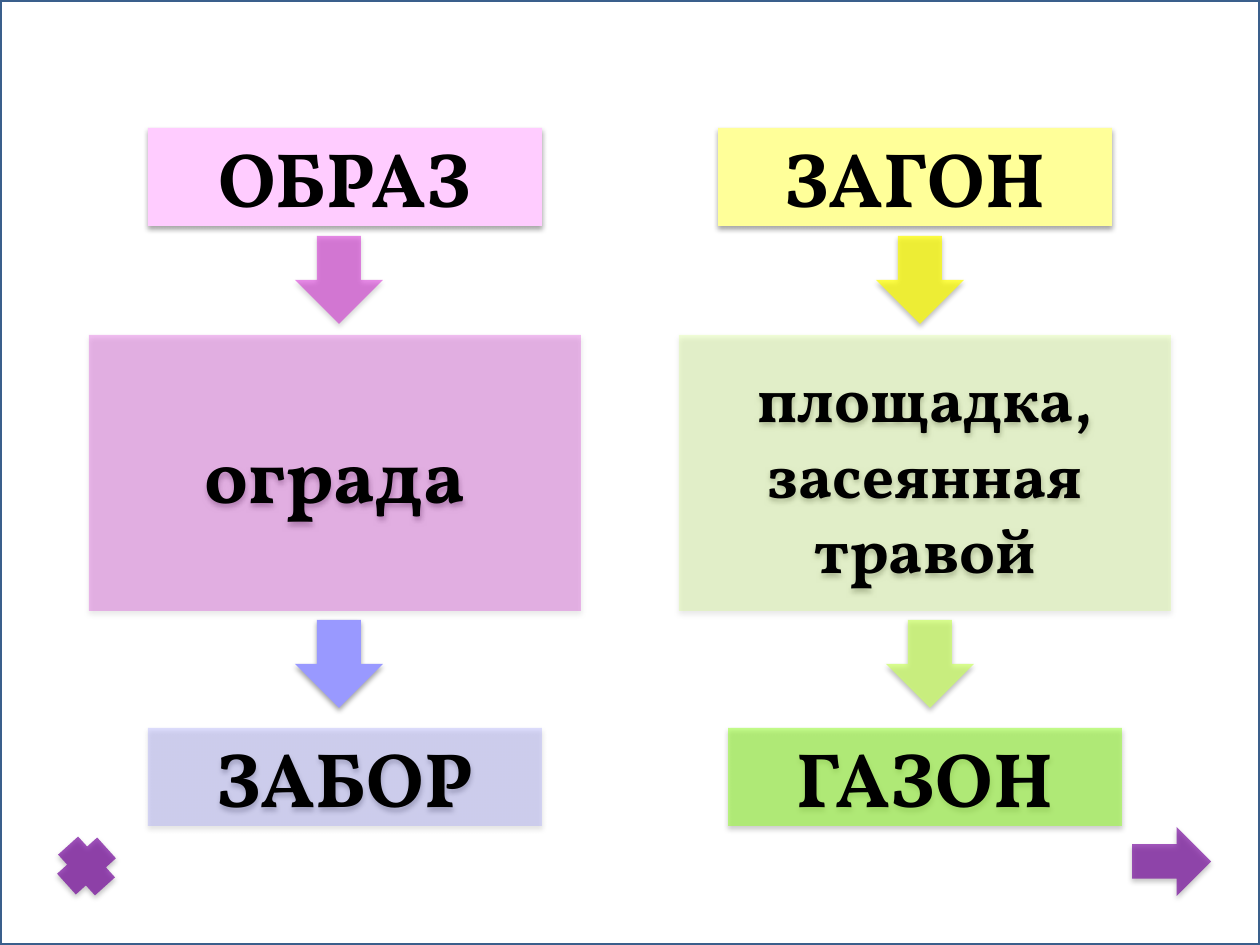
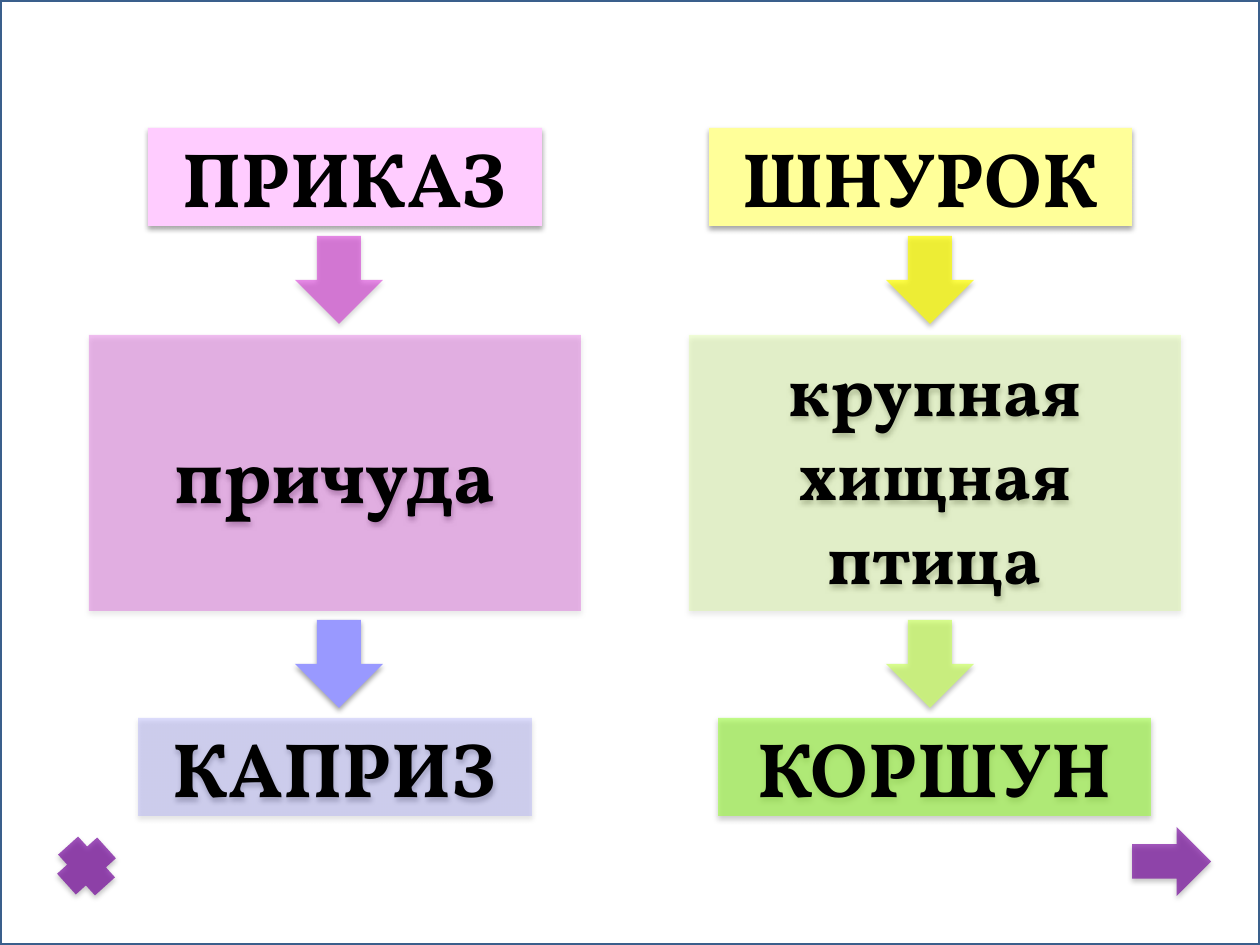
from lxml import etree
from pptx import Presentation
from pptx.dml.color import RGBColor
from pptx.enum.shapes import MSO_SHAPE
from pptx.enum.text import MSO_ANCHOR, PP_ALIGN
from pptx.oxml.ns import qn
from pptx.util import Pt

RECT, DOWN, RIGHT, CROSS = (MSO_SHAPE.RECTANGLE, MSO_SHAPE.DOWN_ARROW,
                            MSO_SHAPE.RIGHT_ARROW, MSO_SHAPE.CROSS)
CENTER, MIDDLE = PP_ALIGN.CENTER, MSO_ANCHOR.MIDDLE

WHITE = RGBColor(0xFF, 0xFF, 0xFF)
BLACK = RGBColor(0x00, 0x00, 0x00)
FRAME_BLUE = RGBColor(0x3A, 0x5F, 0x8C)
PINK = RGBColor(0xFF, 0xCC, 0xFF)
MAGENTA = RGBColor(0xCC, 0x00, 0xCC)
LAVENDER = RGBColor(0x99, 0x99, 0xFF)
PALE_YELLOW = RGBColor(0xFF, 0xFF, 0x99)
YELLOW = RGBColor(0xFF, 0xFF, 0x00)
LIME = RGBColor(0xCC, 0xFF, 0x66)
GREEN = RGBColor(0x99, 0xFF, 0x33)
PURPLE = RGBColor(0x72, 0x00, 0x9A)

FONT = "Vollkorn"
PX = 914400 / 126
WIDTH, HEIGHT = 1260, 945
BAR_HEIGHT, ARROW_SIZE = 98, 88
MEANING_WIDTH, MEANING_HEIGHT = 492, 276
WORD_TOP, ARROW_1_TOP, MEANING_TOP, ARROW_2_TOP = 128, 236, 335, 620
WORD_SIZE = 44

# Fill and opacity of word, arrow, meaning, arrow, answer in each column
COLUMN_FILLS = [
    [(PINK, 100), (MAGENTA, 45), (MAGENTA, 25), (LAVENDER, 100), (LAVENDER, 31)],
    [(PALE_YELLOW, 100), (YELLOW, 72), (LIME, 25), (LIME, 72), (GREEN, 56)],
]

# Answer top, then per column: (word, left, width), arrow left,
# (meaning, left, text size), arrow left, (answer, left, width)
SLIDES = [
    (728, [
        (("ОБРАЗ", 148, 394), 295, ("ограда", 89, 44), 295, ("ЗАБОР", 148, 394)),
        (("ЗАГОН", 718, 394), 876, ("площадка, засеянная травой", 679, 36), 886,
         ("ГАЗОН", 728, 394)),
    ]),
    (718, [
        (("ПРИКАЗ", 148, 394), 295, ("причуда", 89, 44), 295, ("КАПРИЗ", 138, 394)),
        (("ШНУРОК", 709, 423), 886, ("крупная хищная птица", 689, 40), 886,
         ("КОРШУН", 718, 433)),
    ]),
]


def add_block(slide, kind, box, fill, shadow=True):
    """Add a borderless shape; box is in px, fill is (colour, opacity in %)."""
    block = slide.shapes.add_shape(kind, *(round(n * PX) for n in box))
    colour, opacity = fill
    block.fill.solid()
    block.fill.fore_color.rgb = colour
    block.line.fill.background()
    block.shadow.inherit = False
    properties = block.fill._xPr
    if opacity < 100:
        tint = properties.find(qn("a:solidFill"))[0]
        etree.SubElement(tint, qn("a:alpha"), val=str(opacity * 1000))
    if shadow:
        outer = etree.SubElement(properties.find(qn("a:effectLst")), qn("a:outerShdw"),
                                 blurRad=str(Pt(3.1)), dist=str(Pt(1.8)),
                                 dir="5400000", rotWithShape="0")
        black = etree.SubElement(outer, qn("a:srgbClr"), val="000000")
        etree.SubElement(black, qn("a:alpha"), val="35000")
    return block


def add_label(slide, text, size, box, fill):
    frame = add_block(slide, RECT, box, fill).text_frame
    frame.word_wrap = True
    frame.vertical_anchor = MIDDLE
    frame.text = text
    paragraph = frame.paragraphs[0]
    paragraph.alignment = CENTER
    font = paragraph.runs[0].font
    font.name, font.size, font.bold = FONT, Pt(size), True
    font.color.rgb = BLACK


prs = Presentation()
prs.slide_width, prs.slide_height = round(WIDTH * PX), round(HEIGHT * PX)

for answer_top, columns in SLIDES:
    slide = prs.slides.add_slide(prs.slide_layouts[6])
    border = add_block(slide, RECT, (0, 0, WIDTH, HEIGHT), (WHITE, 28), shadow=False)
    border.line.color.rgb = FRAME_BLUE
    border.line.width = Pt(2)

    for column, fills in zip(columns, COLUMN_FILLS):
        word, arrow_1_left, meaning, arrow_2_left, answer = column
        word_fill, arrow_1_fill, meaning_fill, arrow_2_fill, answer_fill = fills

        for (text, left, width), top, fill in ((word, WORD_TOP, word_fill),
                                               (answer, answer_top, answer_fill)):
            add_label(slide, text, WORD_SIZE, (left, top, width, BAR_HEIGHT), fill)

        text, left, size = meaning
        add_label(slide, text, size,
                  (left, MEANING_TOP, MEANING_WIDTH, MEANING_HEIGHT), meaning_fill)

        for left, top, fill in ((arrow_1_left, ARROW_1_TOP, arrow_1_fill),
                                (arrow_2_left, ARROW_2_TOP, arrow_2_fill)):
            add_block(slide, DOWN, (left, top, ARROW_SIZE, ARROW_SIZE), fill)

    add_block(slide, RIGHT, (1132, 827, 79, 69), (PURPLE, 65))
    close_mark = add_block(slide, CROSS, (59, 839, 55, 54), (PURPLE, 67))
    close_mark.rotation = 47.9

prs.save("out.pptx")
